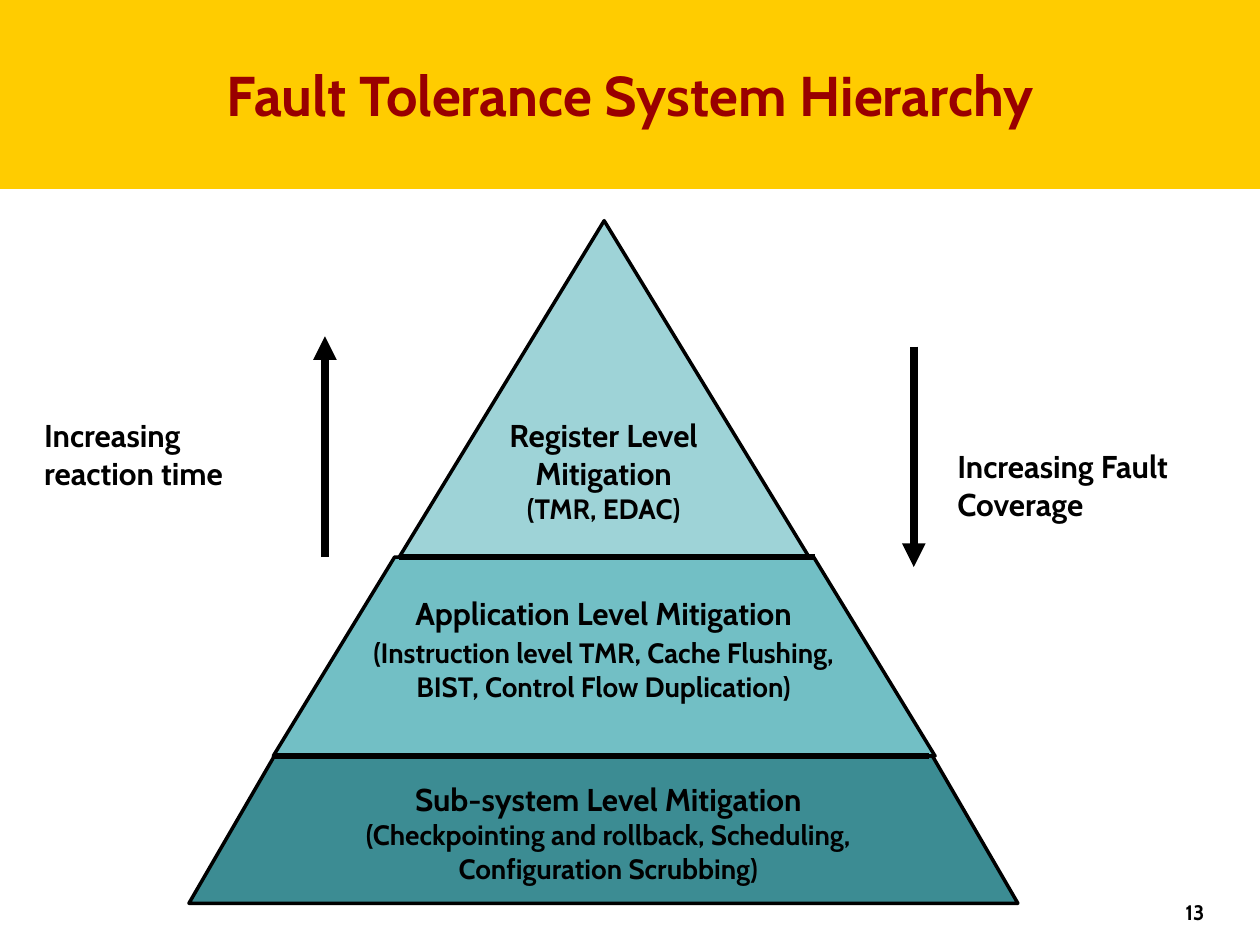
"""Build the slide on the fault tolerance system hierarchy."""
from dataclasses import dataclass

from lxml import etree
from pptx import Presentation
from pptx.dml.color import RGBColor
from pptx.enum.shapes import MSO_CONNECTOR, MSO_SHAPE
from pptx.enum.text import MSO_ANCHOR, MSO_AUTO_SIZE, PP_ALIGN
from pptx.oxml.ns import qn
from pptx.util import Cm, Pt

RECT = MSO_SHAPE.RECTANGLE
TRAP = MSO_SHAPE.TRAPEZOID
PEAK = MSO_SHAPE.ISOSCELES_TRIANGLE
LINE = MSO_CONNECTOR.STRAIGHT
MID = MSO_ANCHOR.MIDDLE
FIXED = MSO_AUTO_SIZE.NONE
LEFT, CENTER, RIGHT = PP_ALIGN.LEFT, PP_ALIGN.CENTER, PP_ALIGN.RIGHT

COLORS = {"band": "FFCC00", "title": "990000", "ink": "000000",
          "base": "3C8C93", "middle": "72BFC5", "top": "9ED3D7"}
FONT = {"name": "Cabin", "bold": True}


@dataclass
class Tier:
    """A filled shape of the slide."""
    kind: int
    color: str
    box: tuple
    slant: float = 0
    edge: float = 2


@dataclass
class Label:
    """A text box with (text, size) paragraphs."""
    box: tuple
    lines: list
    align: int = CENTER
    gap: float = 0


@dataclass
class Rule:
    """A straight line, with or without an arrowhead."""
    start: tuple
    end: tuple
    width: float = 3
    arrow: bool = False


TIERS = [
    Tier(RECT, "band", (0, 0, 25.4, 3.81), edge=0),
    Tier(TRAP, "base", (3.81, 15.24, 16.71, 2.97), 0.58),
    Tier(TRAP, "middle", (5.51, 11.23, 13.34, 4.01), 0.61),
    Tier(PEAK, "top", (8.05, 4.45, 8.26, 6.78)),
]
LABELS = [
    Label((19.25, 18.01, 5.28, 0.84), [("13", 12)], RIGHT),
    Label((7.19, 8.26, 9.96, 2.57),
          [("Register Level", 18), ("Mitigation", 18), ("(TMR, EDAC)", 16)]),
    Label((6.55, 15.6, 11.43, 2.39),
          [("Sub-system Level Mitigation", 18),
           ("(Checkpointing and rollback, Scheduling, Configuration Scrubbing)", 16)]),
    Label((7.19, 11.86, 9.96, 3.18),
          [("Application Level Mitigation", 18),
           ("(Instruction level TMR, Cache Flushing, BIST, Control Flow Duplication)", 16)],
          gap=2),
    Label((0.64, 8.26, 5.28, 1.8), [("Increasing reaction time", 18)], LEFT),
    Label((19.05, 8.89, 5.28, 2.57), [("Increasing Fault Coverage", 18)], LEFT),
]
RULES = [
    Rule((8.05, 11.23), (16.43, 11.23)),
    Rule((5.51, 15.24), (18.72, 15.24)),
    Rule((6.55, 11.23), (6.55, 6.78), 4.5, True),
    Rule((18.42, 6.99), (18.42, 11.43), 4.5, True),
]


def shade(name: str) -> RGBColor:
    """Look up a colour by name."""
    return RGBColor.from_string(COLORS[name])


def style(font, size: float, color: str) -> None:
    """Format a font in the deck's face."""
    for key, value in {**FONT, "size": Pt(size)}.items():
        setattr(font, key, value)
    font.color.rgb = shade(color)


def draw_tier(slide, tier: Tier) -> None:
    """Draw a filled shape."""
    shape = slide.shapes.add_shape(tier.kind, *map(Cm, tier.box))
    shape.shadow.inherit = False
    shape.fill.solid()
    shape.fill.fore_color.rgb = shade(tier.color)
    if tier.slant:
        shape.adjustments[0] = tier.slant
    if tier.edge:
        shape.line.color.rgb = shade("ink")
        shape.line.width = Pt(tier.edge)
    else:
        shape.line.fill.background()


def draw_title(slide, text: str) -> None:
    """Fill and place the title."""
    title = slide.shapes.title
    box = map(Cm, (4.24, 0.84, 16.94, 2.11))
    for key, value in zip(("left", "top", "width", "height"), box):
        setattr(title, key, value)
    frame = title.text_frame
    frame.text = text
    for key, value in {"auto_size": FIXED, "vertical_anchor": MID}.items():
        setattr(frame, key, value)
    para = frame.paragraphs[0]
    para.alignment = CENTER
    style(para.runs[0].font, 32, "title")


def draw_label(slide, label: Label) -> None:
    """Draw a text box."""
    frame = slide.shapes.add_textbox(*map(Cm, label.box)).text_frame
    frame.word_wrap = True
    for i, (text, size) in enumerate(label.lines):
        para = frame.add_paragraph() if i else frame.paragraphs[0]
        para.alignment = label.align
        if i and label.gap:
            para.space_before = Pt(label.gap)
        run = para.add_run()
        run.text = text
        style(run.font, size, "ink")


def draw_rule(slide, rule: Rule) -> None:
    """Draw a line or arrow."""
    line = slide.shapes.add_connector(LINE, *map(Cm, rule.start + rule.end))
    line.line.color.rgb = shade("ink")
    line.line.width = Pt(rule.width)
    if rule.arrow:
        stroke = line.line.fill._xPr
        etree.SubElement(stroke, qn("a:tailEnd"), type="triangle")
    etree.SubElement(line._element.spPr, qn("a:effectLst"))


def main() -> None:
    """Build and save the deck."""
    deck = Presentation()
    deck.slide_width, deck.slide_height = Cm(25.4), Cm(19.05)
    slide = deck.slides.add_slide(deck.slide_layouts[5])
    for tier in TIERS:
        draw_tier(slide, tier)
    tree = slide.shapes._spTree
    tree.append(slide.shapes.title._element)
    draw_title(slide, "Fault Tolerance System Hierarchy")
    for label in LABELS:
        draw_label(slide, label)
    for rule in RULES:
        draw_rule(slide, rule)
    deck.save("out.pptx")


if __name__ == "__main__":
    main()
